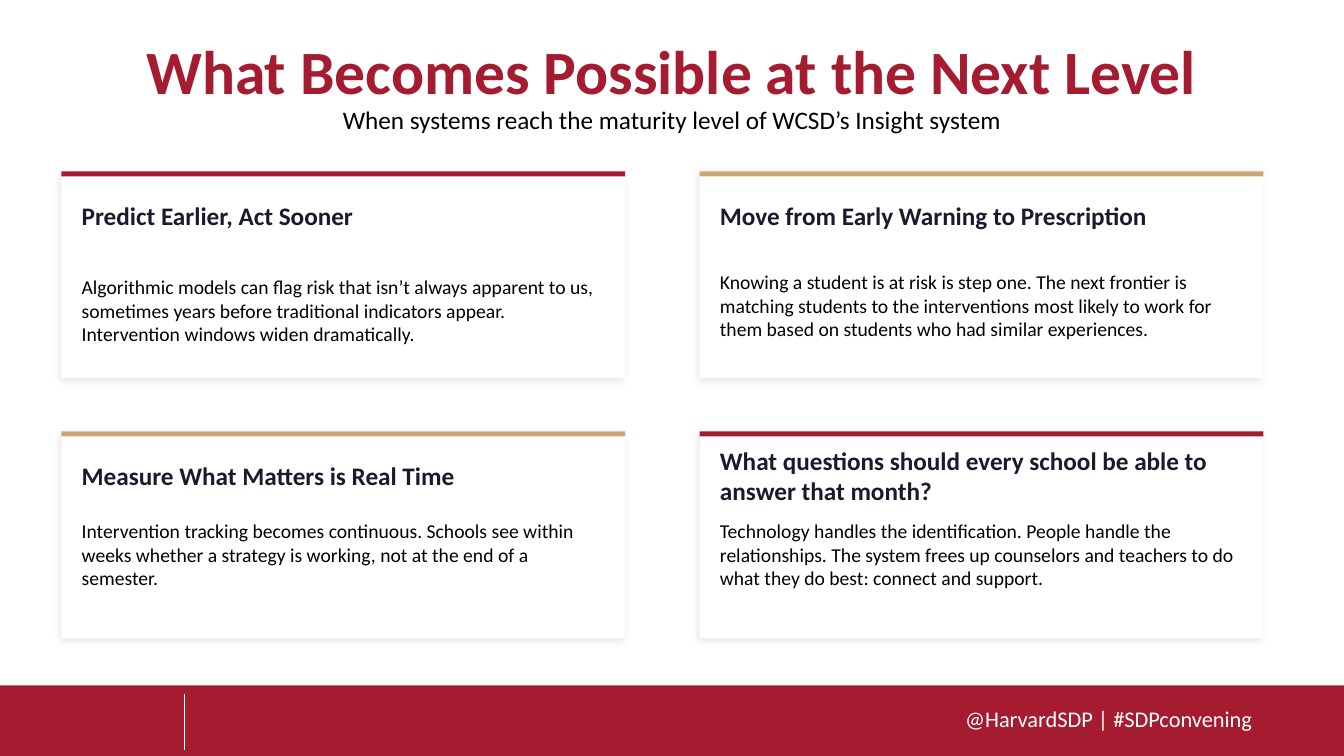
import pptx
import pptx.dml.color
import pptx.enum.shapes
import pptx.enum.text
import pptx.oxml
import pptx.oxml.ns
import pptx.util
from dataclasses import dataclass

Inches = pptx.util.Inches
Align = pptx.enum.text.PP_ALIGN
Anchor = pptx.enum.text.MSO_ANCHOR
RECT = pptx.enum.shapes.MSO_SHAPE.RECTANGLE


@dataclass(frozen=True)
class Theme:
    font: str = "Calibri"
    red: str = "A51C30"
    gold: str = "CDA678"
    navy: str = "1A1A2E"
    black: str = "000000"
    white: str = "FFFFFF"
    title: int = 44
    head: int = 18
    foot: int = 16
    body: int = 14


THEME = Theme()
WIDE, HIGH = 13.33, 7.5
CARD_W, CARD_H = 5.59, 2.05
LEFT, TOP = 0.61, 1.7
STEP_X, STEP_Y = 6.33, 2.58

# Heading, text, bar colour, offset of the text from the card's top
CARDS = [
    ("Predict Earlier, Act Sooner",
     "Algorithmic models can flag risk that isn’t always apparent to us, "
     "sometimes years before traditional indicators appear. "
     "Intervention windows widen dramatically.", THEME.red, 0.71),
    ("Move from Early Warning to Prescription",
     "Knowing a student is at risk is step one. The next frontier is "
     "matching students to the interventions most likely to work for them "
     "based on students who had similar experiences.", THEME.gold, 0.66),
    ("Measure What Matters is Real Time",
     "Intervention tracking becomes continuous. Schools see within weeks "
     "whether a strategy is working, not at the end of a semester.",
     THEME.gold, 0.55),
    ("What questions should every school be able to answer that month?",
     "Technology handles the identification. People handle the "
     "relationships. The system frees up counselors and teachers to do "
     "what they do best: connect and support.", THEME.red, 0.55),
]


def color(code):
    return pptx.dml.color.RGBColor.from_string(code)


def assign(item, values):
    for name, value in values.items():
        setattr(item, name, value)


def write(shape, text, size, code, bold=False, frame=None, para=None):
    """Fill a shape with one formatted paragraph."""
    tf = shape.text_frame
    tf.text = text
    assign(tf, {"word_wrap": True,
                "auto_size": pptx.enum.text.MSO_AUTO_SIZE.NONE,
                **(frame or {})})
    first = tf.paragraphs[0]
    assign(first, para or {})
    assign(first.font, {"name": THEME.font, "size": pptx.util.Pt(size),
                        "bold": bold})
    first.font.color.rgb = color(code)


def block(shapes, box, code):
    """Draw a plain filled rectangle."""
    rect = shapes.add_shape(RECT, *map(Inches, box))
    rect.shadow.inherit = False
    rect.fill.solid()
    rect.fill.fore_color.rgb = color(code)
    rect.line.fill.background()
    return rect


def shade(shape):
    """Give a shape a soft, faint shadow."""
    space = pptx.oxml.ns.nsdecls("a")
    shape.shadow.inherit = False
    effects = shape._element.spPr.find(pptx.oxml.ns.qn("a:effectLst"))
    effects.append(pptx.oxml.parse_xml(
        f'<a:outerShdw {space} blurRad="76200" dist="25400" dir="8100000" '
        'algn="bl" rotWithShape="0"><a:srgbClr val="000000">'
        '<a:alpha val="10000"/></a:srgbClr></a:outerShdw>'))


def header(slide, box):
    x, y, w, h = box
    # Title
    title = slide.shapes.title
    assign(title, {"left": Inches(x), "top": Inches(y),
                   "width": Inches(w), "height": Inches(h)})
    write(title, "What Becomes Possible at the Next Level", THEME.title,
          THEME.red, True, {"vertical_anchor": Anchor.MIDDLE},
          {"alignment": Align.CENTER, "line_spacing": 0.9})
    # Subtitle
    sub = slide.shapes.add_textbox(*map(Inches, (x, y + 0.74, w, 0.65)))
    write(sub, "When systems reach the maturity level of WCSD’s Insight system",
          THEME.head, THEME.black,
          para={"alignment": Align.CENTER, "line_spacing": 0.9})


def card(slide, box, head, text, code, drop):
    x, y, w, h = box
    shapes = slide.shapes.add_group_shape().shapes
    # Panel and top bar
    shade(block(shapes, box, THEME.white))
    block(shapes, (x, y, w, 0.05), code)
    # Heading and text
    frame = {"vertical_anchor": Anchor.MIDDLE, "margin_left": 0,
             "margin_right": 0, "margin_top": 0, "margin_bottom": 0}
    parts = [(head, 0.18, 0.52, THEME.head, THEME.navy, True),
             (text, drop, 1.34, THEME.body, THEME.black, False)]
    for words, down, tall, size, ink, bold in parts:
        area = shapes.add_textbox(
            *map(Inches, (x + 0.2, y + down, w - 0.41, tall)))
        write(area, words, size, ink, bold, frame)


def footer(slide, box):
    x, y, w, h = box
    # Band
    block(slide.shapes, box, THEME.red)
    # Handle and tag
    tag = slide.shapes.add_textbox(
        *map(Inches, (x + 8.39, y + 0.15, 4.03, 0.37)))
    write(tag, "@HarvardSDP | #SDPconvening", THEME.foot, THEME.white,
          frame={"margin_right": 0}, para={"alignment": Align.RIGHT})
    # Divider
    rule = slide.shapes.add_connector(
        pptx.enum.shapes.MSO_CONNECTOR.STRAIGHT,
        *map(Inches, (x + 1.83, y + 0.09, x + 1.83, y + 0.64)))
    rule.line.color.rgb = color(THEME.white)
    rule.line.width = pptx.util.Pt(0.5)
    rule._element.spPr.append(pptx.oxml.parse_xml(
        f'<a:effectLst {pptx.oxml.ns.nsdecls("a")}/>'))


def main():
    deck = pptx.Presentation()
    assign(deck, {"slide_width": Inches(WIDE), "slide_height": Inches(HIGH)})
    slide = deck.slides.add_slide(deck.slide_layouts.get_by_name("Title Only"))
    header(slide, (0, 0.28, WIDE, 0.91))
    for i, item in enumerate(CARDS):
        row, col = divmod(i, 2)
        card(slide, (LEFT + col * STEP_X, TOP + row * STEP_Y, CARD_W, CARD_H),
             *item)
    footer(slide, (0, 6.8, WIDE, 0.7))
    deck.save("out.pptx")


if __name__ == "__main__":
    main()
